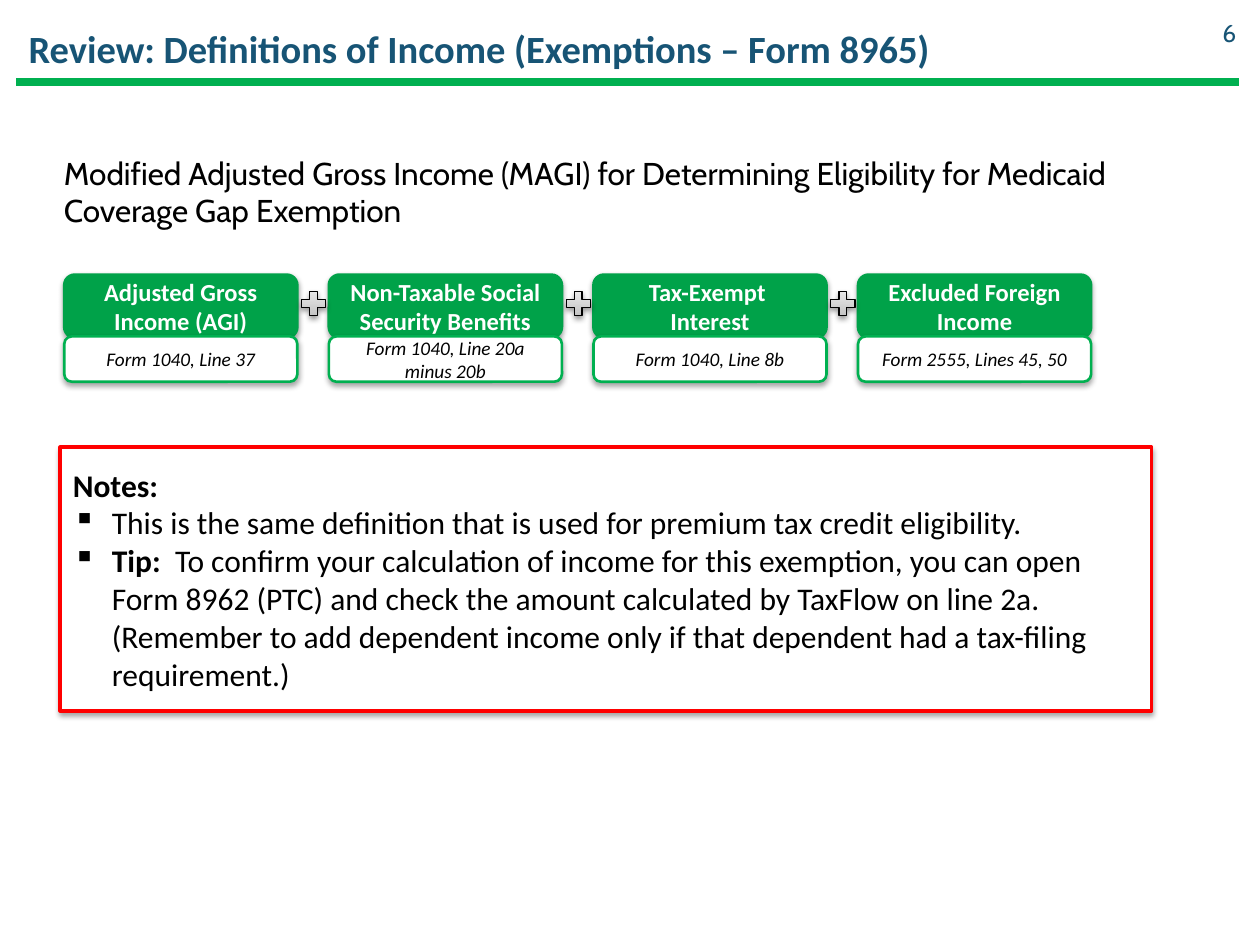
from dataclasses import dataclass

from lxml import etree
from pptx import Presentation
from pptx import util as u
from pptx.dml.color import RGBColor
from pptx.enum import shapes, text
from pptx.oxml.ns import qn


@dataclass(frozen=True)
class Theme:
    navy: str = "175475"
    rule: str = "00B050"
    green: str = "00A249"
    red: str = "FF0000"
    black: str = "000000"
    white: str = "FFFFFF"
    dark: str = "BDBDBD"
    light: str = "EEEEEE"
    sans: str = "Calibri"
    alt: str = "Cabin"
    title: int = 22
    body: int = 18
    head: int = 14
    small: int = 11


def rgb(code):
    return RGBColor.from_string(code)


def write(frame, paras, size, font, color, bold=False, italic=False,
          align=text.PP_ALIGN.LEFT, anchor=text.MSO_ANCHOR.MIDDLE):
    """Each paragraph is a string, or a list of (string, bold) runs."""
    frame.word_wrap = True
    frame.vertical_anchor = anchor
    for i, runs in enumerate(paras):
        para = frame.paragraphs[0] if i == 0 else frame.add_paragraph()
        para.alignment = align
        for words, heavy in [(runs, bold)] if isinstance(runs, str) else runs:
            run = para.add_run()
            run.text = words
            face = run.font
            face.size, face.name = u.Pt(size), font
            face.bold, face.italic = heavy, italic
            face.color.rgb = rgb(color)


def bullet(para, indent):
    props = para._p.get_or_add_pPr()
    props.set("marL", str(indent))
    props.set("indent", str(-indent))
    etree.SubElement(props, qn("a:buChar"), char="▪")


def shade(shape, alpha, drop):
    """Soft black shadow falling straight down."""
    shape.shadow.inherit = False
    effects = shape._element.spPr.find(qn("a:effectLst"))
    outer = etree.SubElement(
        effects, qn("a:outerShdw"), blurRad=str(u.Pt(3.1)),
        dist=str(u.Pt(drop)), dir="5400000", rotWithShape="0")
    tone = etree.SubElement(outer, qn("a:srgbClr"), val="000000")
    etree.SubElement(tone, qn("a:alpha"), val=str(alpha * 1000))


class Deck:
    def __init__(self, theme):
        self.theme = theme
        self.file = Presentation()
        self.file.slide_width, self.file.slide_height = u.Inches(10), u.Inches(7.5)
        self.slide = self.file.slides.add_slide(self.file.slide_layouts[6])

    def label(self, box, words, **style):
        shape = self.slide.shapes.add_textbox(*map(u.Inches, box))
        write(shape.text_frame, [words], **style)

    def rule(self, left, right, top, color, width):
        ends = map(u.Inches, (left, top, right, top))
        line = self.slide.shapes.add_connector(shapes.MSO_CONNECTOR.STRAIGHT, *ends)
        line.line.color.rgb = rgb(color)
        line.line.width = u.Pt(width)
        etree.SubElement(line._element.spPr, qn("a:effectLst"))

    def shape(self, kind, box, edge, width, alpha=35, drop=1.8):
        item = self.slide.shapes.add_shape(kind, *map(u.Inches, box))
        item.line.color.rgb = rgb(edge)
        item.line.width = u.Pt(width)
        shade(item, alpha, drop)
        return item

    def panel(self, kind, box, paras, fill, edge, width, **style):
        item = self.shape(kind, box, edge, width)
        item.fill.solid()
        item.fill.fore_color.rgb = rgb(fill)
        write(item.text_frame, paras, **style)
        return item.text_frame

    def card(self, left, head, source):
        t = self.theme
        kind = shapes.MSO_SHAPE.ROUNDED_RECTANGLE
        mid = text.PP_ALIGN.CENTER
        self.panel(kind, (left, 2.18, 1.85, 0.5), head, t.green, t.green, 1.5,
                   size=t.head, font=t.sans, color=t.white, bold=True, align=mid)
        self.panel(kind, (left, 2.67, 1.85, 0.36), [source], t.white, t.rule, 1.5,
                   size=t.small, font=t.sans, color=t.black, italic=True, align=mid)

    def plus(self, left):
        t = self.theme
        item = self.shape(shapes.MSO_SHAPE.MATH_PLUS, (left, 2.28, 0.26, 0.26),
                          t.black, 0.75, alpha=38, drop=1.6)
        item.fill.gradient()
        item.fill.gradient_angle = 90
        for stop, color in zip(item.fill.gradient_stops, (t.dark, t.light)):
            stop.color.rgb = rgb(color)

    def notes(self, box, paras):
        t = self.theme
        frame = self.panel(shapes.MSO_SHAPE.RECTANGLE, box, paras, t.white, t.red, 2.25,
                           size=t.body, font=t.sans, color=t.black, bold=True)
        for para in frame.paragraphs[1:]:
            bullet(para, u.Inches(0.31))


def main():
    t = Theme()
    deck = Deck(t)

    # Heading, rule and slide number
    deck.rule(0.13, 9.83, 0.65, t.rule, 4.75)
    deck.label((0.13, 0.1, 9, 0.57), "Review: Definitions of Income (Exemptions – Form 8965)",
               size=t.title, font=t.sans, color=t.navy, bold=True)
    deck.label((9.4, 0.06, 0.51, 0.4), "6", size=t.head, font=t.alt,
               color=t.navy, align=text.PP_ALIGN.RIGHT)

    # Lead sentence
    deck.label((0.41, 1.17, 9.43, 0.55),
               "Modified Adjusted Gross Income (MAGI) for Determining Eligibility "
               "for Medicaid Coverage Gap Exemption",
               size=t.body, font=t.alt, color=t.black, anchor=text.MSO_ANCHOR.TOP)

    # Sum of income parts
    parts = [
        (["Adjusted Gross Income (AGI)"], "Form 1040, Line 37"),
        (["Non-Taxable Social Security Benefits"], "Form 1040, Line 20a minus 20b"),
        (["Tax-Exempt ", "Interest"], "Form 1040, Line 8b"),
        (["Excluded Foreign Income"], "Form 2555, Lines 45, 50"),
    ]
    step = 2.1
    for i, (head, source) in enumerate(parts):
        deck.card(0.51 + i * step, head, source)
    for i in range(len(parts) - 1):
        deck.plus(2.36 + i * step)

    # Notes
    deck.notes((0.48, 3.55, 8.66, 2.09), [
        "Notes:",
        [("This is the same definition that is used for premium tax credit eligibility.", False)],
        [("Tip:  ", True),
         ("To confirm your calculation of income for this exemption, you can open "
          "Form 8962 (PTC) and check the amount calculated by TaxFlow on line 2a. "
          "(Remember to add dependent income only if that dependent had a "
          "tax-filing requirement.)", False)],
    ])

    deck.file.save("out.pptx")


if __name__ == "__main__":
    main()
